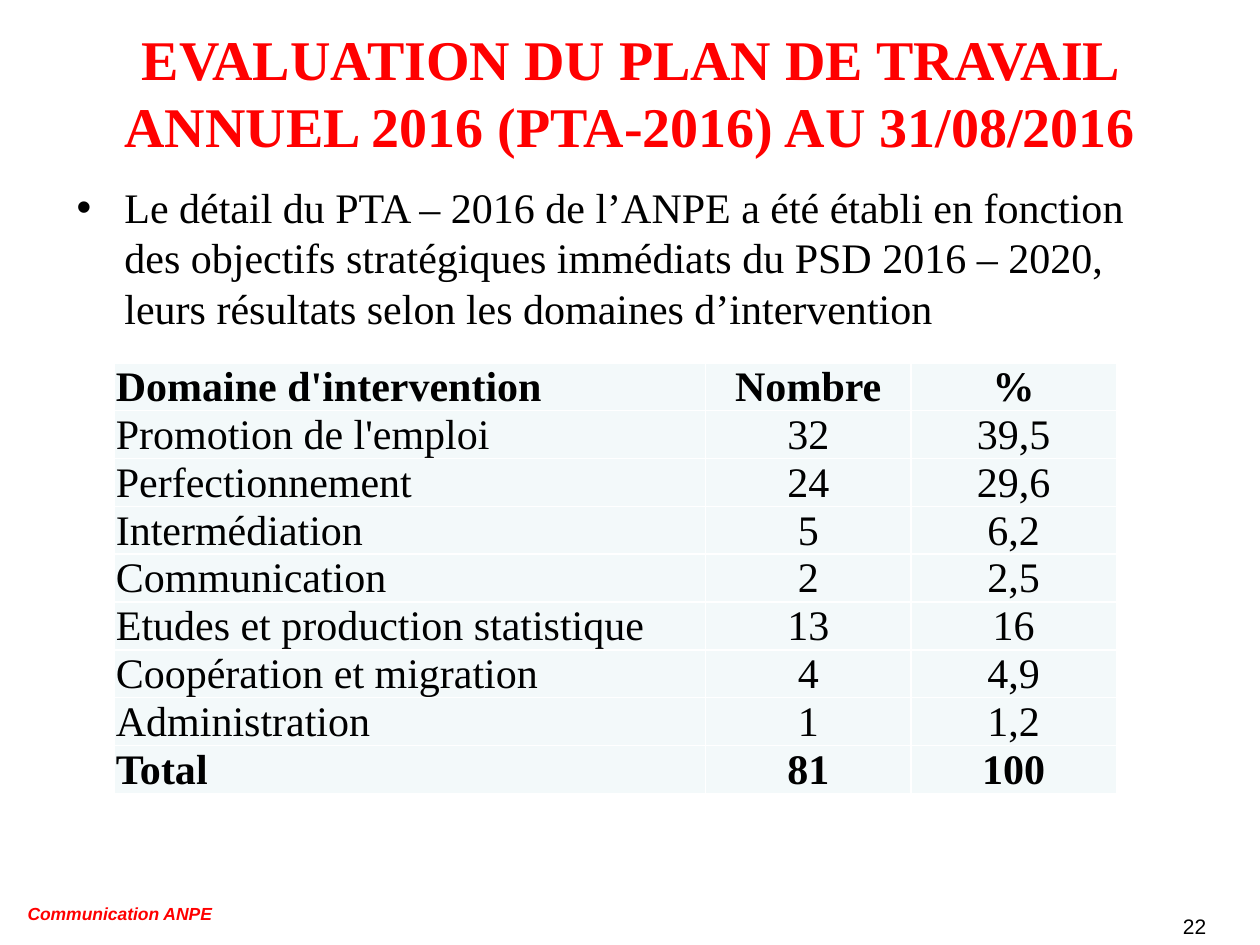
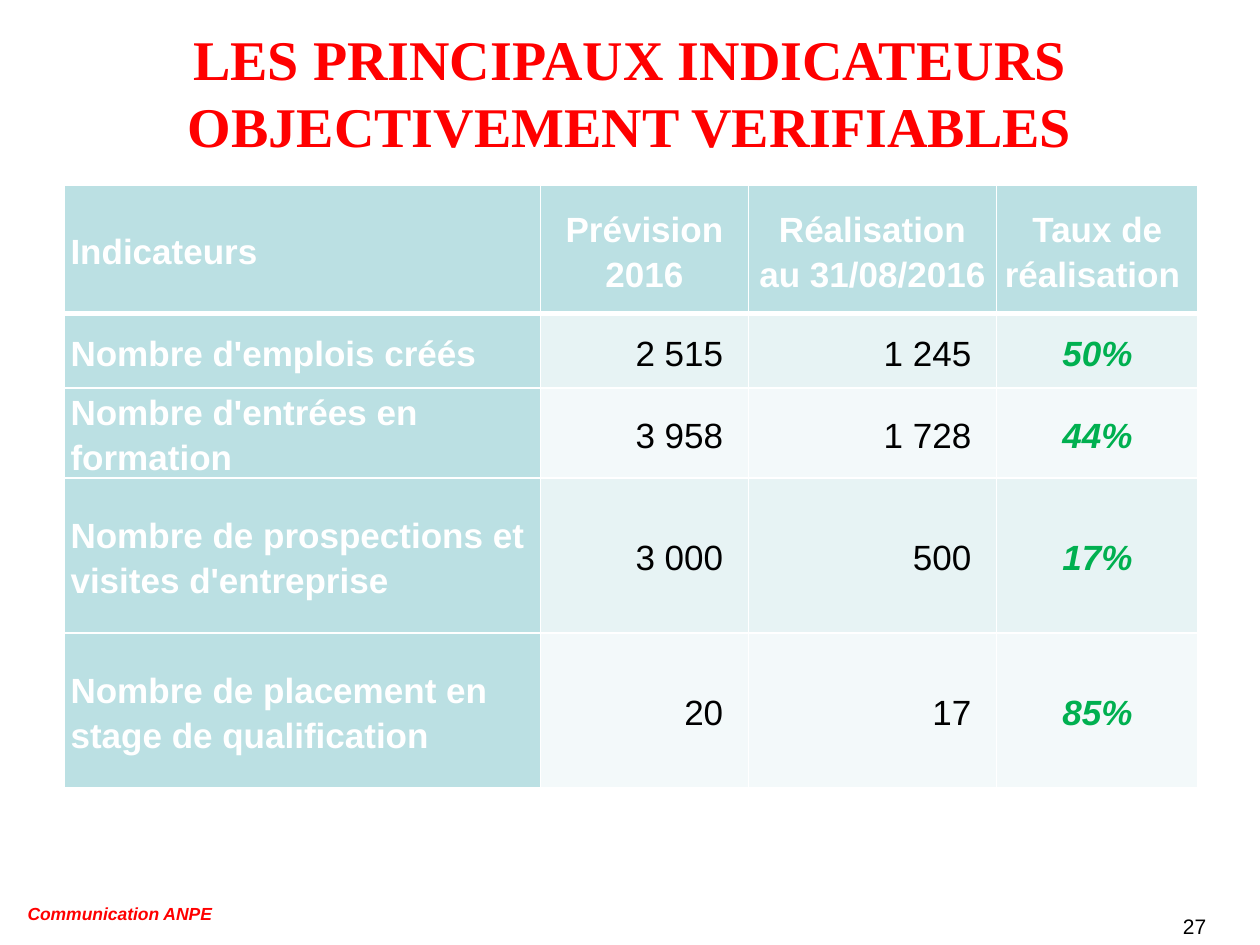
import pptx
import pptx.dml.color
import pptx.enum.text
import pptx.util
from lxml import etree
from pptx.oxml.ns import qn

Inches = pptx.util.Inches
Pt = pptx.util.Pt
ALIGN = pptx.enum.text.PP_ALIGN
MIDDLE = pptx.enum.text.MSO_ANCHOR.MIDDLE
NO_FIT = pptx.enum.text.MSO_AUTO_SIZE.NONE

SERIF, SANS = "Times New Roman", "Arial"
RED, GREEN, BLACK, WHITE = "FF0000", "00B050", "000000", "FFFFFF"
TEAL, TEAL_LIGHT, TEAL_PALE = "BBE0E3", "E7F3F4", "F3F9FA"

TITLE_BOX = (0.5, 0.3, 9, 0.85)
FOOTER_BOX = (0.12, 7.12, 8.51, 0.27)
NUMBER_BOX = (9.29, 7.2, 0.71, 0.3)

DOMAINS = [
    ("Domaine d'intervention", "Nombre", "%"),
    ("Promotion de l'emploi", "32", "39,5"),
    ("Perfectionnement", "24", "29,6"),
    ("Intermédiation", "5", "6,2"),
    ("Communication", "2", "2,5"),
    ("Etudes et production statistique", "13", "16"),
    ("Coopération et migration", "4", "4,9"),
    ("Administration", "1", "1,2"),
    ("Total", "81", "100"),
]
INDICATORS = [
    ("Indicateurs", "Prévision 2016", "Réalisation au 31/08/2016", "Taux de réalisation "),
    ("Nombre d'emplois créés", "2 515", "1 245", "50%"),
    ("Nombre d'entrées en formation", "3 958", "1 728", "44%"),
    ("Nombre de prospections et visites d'entreprise", "3 000", "500", "17%"),
    ("Nombre de placement en stage de qualification", "20", "17", "85%"),
]


def color(hex_string):
    return pptx.dml.color.RGBColor.from_string(hex_string)


def write(tf, text, font=SANS, size=20, fill=BLACK, bold=False, italic=False,
          align=ALIGN.LEFT, spacing=None):
    """Put one formatted paragraph in a text frame and return it."""
    p = tf.paragraphs[0]
    p.alignment = align
    if spacing:
        p.line_spacing = spacing
    r = p.add_run()
    r.text = text
    r.font.name, r.font.size = font, Pt(size)
    r.font.bold, r.font.italic = bold, italic
    r.font.color.rgb = color(fill)
    return p


def add_text(s, box, text, **fmt):
    tf = s.shapes.add_textbox(*map(Inches, box)).text_frame
    tf.word_wrap = True
    return write(tf, text, **fmt)


def add_base_slide(prs, title, number):
    """Add a slide with the shared title, footer and page number."""
    s = prs.slides.add_slide(prs.slide_layouts[5])
    sp = s.shapes.title
    sp.left, sp.top, sp.width, sp.height = map(Inches, TITLE_BOX)
    tf = sp.text_frame
    tf.word_wrap, tf.auto_size, tf.vertical_anchor = True, NO_FIT, MIDDLE
    write(tf, title, font=SERIF, size=32, fill=RED, bold=True, align=ALIGN.CENTER)
    add_text(s, FOOTER_BOX, "Communication ANPE", size=10, fill=RED, bold=True, italic=True)
    add_text(s, NUMBER_BOX, str(number), size=12)
    return s


def add_bullet(s, box, text):
    p = add_text(s, box, text, font=SERIF, size=24)
    pPr = p._p.get_or_add_pPr()
    indent = Inches(0.38)
    pPr.set("marL", str(indent))
    pPr.set("indent", str(-indent))
    etree.SubElement(pPr, qn("a:buFont")).set("typeface", SANS)
    etree.SubElement(pPr, qn("a:buChar")).set("char", "•")


def set_borders(cell, **widths):
    """Draw white cell borders, with widths in points by side (L, R, T, B)."""
    tcPr = cell._tc.get_or_add_tcPr()
    for position, (side, width) in enumerate(widths.items()):
        ln = etree.Element(qn("a:ln" + side), w=str(Pt(width)))
        fill = etree.SubElement(ln, qn("a:solidFill"))
        etree.SubElement(fill, qn("a:srgbClr"), val=WHITE)
        tcPr.insert(position, ln)


def add_table(s, left, top, widths, heights, rows, margins, cell_style, header_line):
    """Add a table; cell_style(row, column) gives the fill and text format."""
    table = s.shapes.add_table(len(rows), len(widths), Inches(left), Inches(top),
                               Inches(sum(widths)), Inches(sum(heights))).table
    table.first_row = table.horz_banding = False
    for column, width in zip(table.columns, widths):
        column.width = Inches(width)
    for row, height in zip(table.rows, heights):
        row.height = Inches(height)
    for i, values in enumerate(rows):
        for j, value in enumerate(values):
            cell = table.cell(i, j)
            background, fmt = cell_style(i, j)
            cell.fill.solid()
            cell.fill.fore_color.rgb = color(background)
            set_borders(cell, L=1, R=1, T=header_line if i == 1 else 1,
                        B=header_line if i == 0 else 1)
            cell.vertical_anchor = MIDDLE
            (cell.margin_left, cell.margin_top,
             cell.margin_right, cell.margin_bottom) = map(Inches, margins)
            if fmt["align"] == ALIGN.RIGHT:
                cell.margin_right = Inches(0.2)
            write(cell.text_frame, value, **fmt)


def domain_style(i, j):
    return TEAL_PALE, dict(font=SERIF, size=24, bold=i in (0, len(DOMAINS) - 1),
                           align=ALIGN.CENTER if j else ALIGN.LEFT, spacing=Pt(26.6))


def indicator_style(i, j):
    fmt = dict(spacing=Pt(25.7))
    if i == 0 or j == 0:
        align = ALIGN.CENTER if j else ALIGN.LEFT
        return TEAL, dict(fmt, fill=WHITE, bold=True, align=align)
    background = TEAL_LIGHT if i % 2 else TEAL_PALE
    if j == 3:
        return background, dict(fmt, fill=GREEN, bold=True, italic=True, align=ALIGN.CENTER)
    return background, dict(fmt, align=ALIGN.RIGHT)


def add_work_plan_slide(prs):
    s = add_base_slide(
        prs, "EVALUATION DU PLAN DE TRAVAIL ANNUEL 2016 (PTA-2016) AU 31/08/2016", 22)
    add_table(s, 0.91, 2.88, [4.69, 1.63, 1.63], [0.34] * len(DOMAINS), DOMAINS,
              (0.01, 0.01, 0.01, 0), domain_style, header_line=1)
    add_bullet(s, (0.51, 1.39, 9, 1.35),
               "Le détail du PTA – 2016 de l’ANPE a été établi en fonction des objectifs "
               "stratégiques immédiats du PSD 2016 – 2020, leurs résultats selon les "
               "domaines d’intervention")


def add_indicators_slide(prs):
    s = add_base_slide(prs, "LES PRINCIPAUX INDICATEURS OBJECTIVEMENT VERIFIABLES", 27)
    add_table(s, 0.51, 1.47, [3.78, 1.65, 1.97, 1.6], [1.02, 0.59, 0.59, 1.23, 1.23],
              INDICATORS, (0.05, 0, 0.05, 0), indicator_style, header_line=3)


def main():
    prs = pptx.Presentation()
    prs.slide_width, prs.slide_height = Inches(10), Inches(7.5)
    add_work_plan_slide(prs)
    add_indicators_slide(prs)
    prs.save("out.pptx")


if __name__ == "__main__":
    main()
